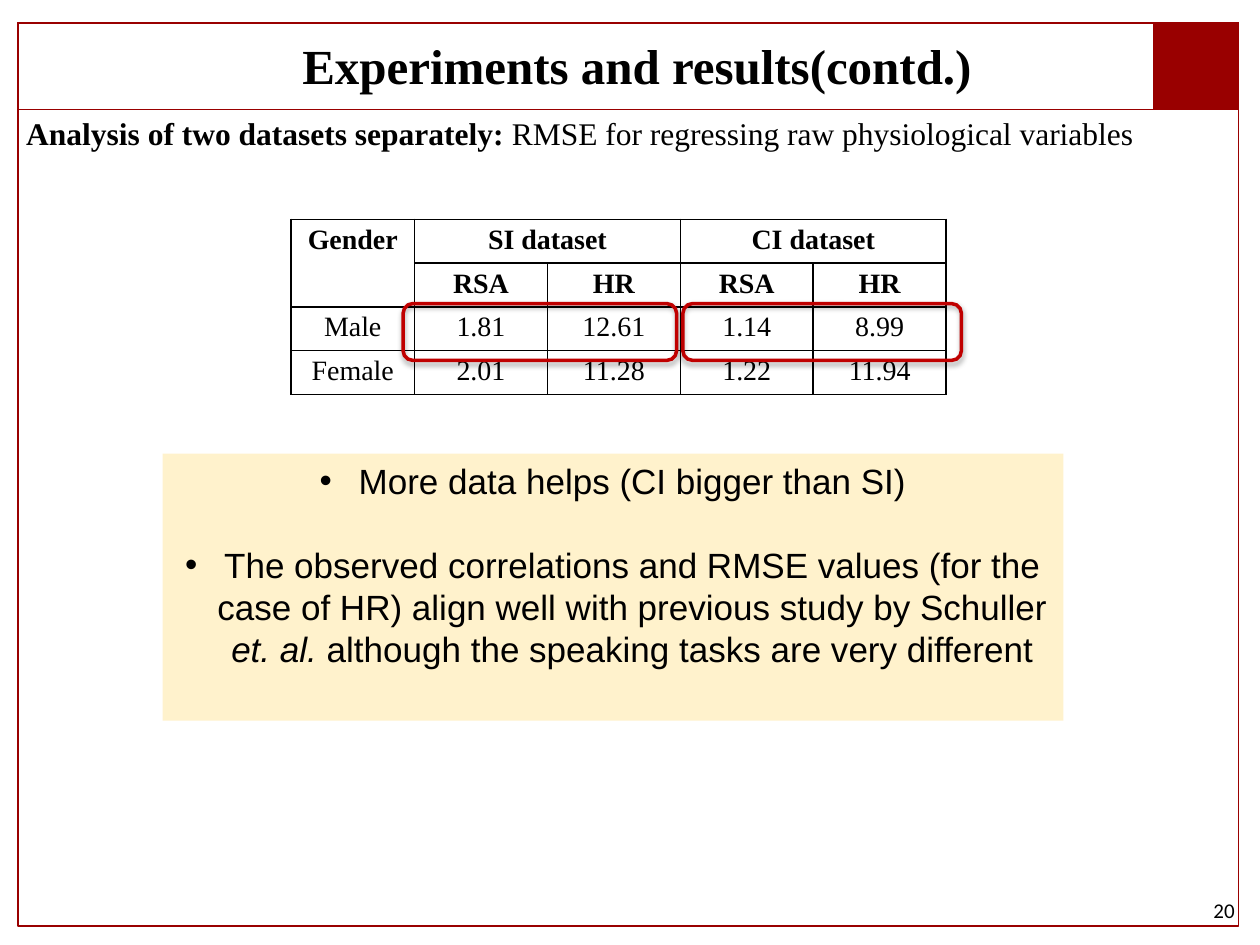
from lxml.etree import SubElement
from pptx import Presentation
from pptx.dml.color import RGBColor
from pptx.enum.shapes import MSO_SHAPE
from pptx.enum.text import MSO_ANCHOR, MSO_AUTO_SIZE, PP_ALIGN
from pptx.oxml.ns import qn
from pptx.util import Inches, Pt

COLORS = {"frame": "990000", "ink": "000000", "ring": "C00000", "panel": "FFF2CC"}
SERIF = "Times New Roman"
ROWS = [
    ["Gender", "SI dataset", "", "CI dataset", ""],
    ["", "RSA", "HR", "RSA", "HR"],
    ["Male", "1.81", "12.61", "1.14", "8.99"],
    ["Female", "2.01", "11.28", "1.22", "11.94"],
]
COLUMN_WIDTHS = [0.98] + [1.055] * 4
MERGES = [((0, 0), (1, 0)), ((0, 1), (0, 2)), ((0, 3), (0, 4))]
POINTS = [
    [("More data helps (CI bigger than SI)", False)],
    [
        ("The observed correlations and RMSE values (for the case of HR) "
         "align well with previous study by Schuller ", False),
        ("et. al.", True),
        (" although the speaking tasks are very different", False),
    ],
]


def color(name):
    """Return the named palette colour."""
    return RGBColor.from_string(COLORS[name])


def set_values(target, **values):
    """Set each given attribute on the target."""
    for name, value in values.items():
        setattr(target, name, value)


def place(shape, box):
    """Move a shape to a box given in inches."""
    edges = zip(("left", "top", "width", "height"), box)
    set_values(shape, **{name: Inches(value) for name, value in edges})


def add_span(para, text, size, face=SERIF, **values):
    """Append a formatted piece of text to a paragraph."""
    span = para.add_run()
    span.text = text
    set_values(span.font, size=Pt(size), name=face, **values)
    span.font.color.rgb = color("ink")


def set_frame(frame, inset, anchor=MSO_ANCHOR.TOP):
    """Give a text frame wrapping, equal insets and an anchor."""
    sides = ("left", "top", "right", "bottom")
    set_values(frame, word_wrap=True, auto_size=MSO_AUTO_SIZE.NONE, vertical_anchor=anchor,
               **{f"margin_{side}": Inches(inset) for side in sides})


def add_outline(page, box, kind, line, width, fill=None):
    """Draw an outlined shape, hollow unless a fill is named."""
    shape = page.shapes.add_shape(kind, *map(Inches, box))
    shape.shadow.inherit = False
    shape.line.color.rgb = color(line)
    shape.line.width = Pt(width)
    if fill:
        shape.fill.solid()
        shape.fill.fore_color.rgb = color(fill)
    else:
        shape.fill.background()
    return shape


def add_page_frame(page, box):
    """Draw the page border, title band and corner block."""
    left, top, width, height = box
    band, corner = 0.69, 0.67
    corner_box = (left + width - corner, top, corner, band)
    for part, fill in ((box, None), ((left, top, width, band), None), (corner_box, "frame")):
        add_outline(page, part, MSO_SHAPE.RECTANGLE, "frame", 1, fill)


def add_title(page, box):
    """Fill the title placeholder."""
    title = page.shapes.title
    place(title, box)
    frame = title.text_frame
    set_frame(frame, 0.05)
    frame.margin_top = Inches(0.1)
    para = frame.paragraphs[0]
    para.alignment = PP_ALIGN.CENTER
    add_span(para, "Experiments and results(contd.)", 28, bold=True)


def add_subheading(page, box):
    """Write the line that introduces the table."""
    frame = page.shapes.add_textbox(*map(Inches, box)).text_frame
    set_frame(frame, 0.05)
    frame.margin_left = Inches(0.1)
    para = frame.paragraphs[0]
    add_span(para, "Analysis of two datasets separately: ", 18, bold=True)
    add_span(para, "RMSE for regressing raw physiological variables", 18, bold=False)


def add_page_number(page, box):
    """Write the page number in the lower right corner."""
    frame = page.shapes.add_textbox(*map(Inches, box)).text_frame
    set_frame(frame, 0.05, MSO_ANCHOR.MIDDLE)
    para = frame.paragraphs[0]
    para.alignment = PP_ALIGN.RIGHT
    add_span(para, "20", 12, "Calibri")


def set_borders(cell):
    """Rule all four sides of a table cell."""
    properties = cell._tc.get_or_add_tcPr()
    for side in ("a:lnL", "a:lnR", "a:lnT", "a:lnB"):
        line = SubElement(properties, qn(side), w=str(Pt(1)))
        fill = SubElement(line, qn("a:solidFill"))
        SubElement(fill, qn("a:srgbClr"), val=COLORS["ink"])


def add_error_table(page, box):
    """Build the RMSE table by gender and dataset."""
    shape = page.shapes.add_table(len(ROWS), len(COLUMN_WIDTHS), *map(Inches, box))
    table = shape.table
    set_values(table, first_row=False, horz_banding=False)
    for column, width in zip(table.columns, COLUMN_WIDTHS):
        column.width = Inches(width)
    for start, end in MERGES:
        table.cell(*start).merge(table.cell(*end))
    for row, texts in enumerate(ROWS):
        for column, text in enumerate(texts):
            cell = table.cell(row, column)
            set_borders(cell)
            cell.fill.background()
            set_values(cell, margin_top=Inches(0.04), margin_bottom=Inches(0.04))
            if text:
                para = cell.text_frame.paragraphs[0]
                para.alignment = PP_ALIGN.CENTER
                add_span(para, text, 16, bold=row < 2)


def add_ring(page, box):
    """Ring a pair of table values with a softly shadowed outline."""
    ring = add_outline(page, box, MSO_SHAPE.ROUNDED_RECTANGLE, "ring", 2)
    effects = ring._element.spPr.find(qn("a:effectLst"))
    shadow = SubElement(effects, qn("a:outerShdw"), blurRad=str(Pt(3)), dist=str(Pt(1.8)),
                        dir="5400000", rotWithShape="0")
    tint = SubElement(shadow, qn("a:srgbClr"), val=COLORS["ink"])
    SubElement(tint, qn("a:alpha"), val="35000")


def add_findings(page, box):
    """Fill the body placeholder with the bulleted findings."""
    body = page.placeholders[1]
    place(body, box)
    body.fill.solid()
    body.fill.fore_color.rgb = color("panel")
    frame = body.text_frame
    set_frame(frame, 0.05)
    for index, spans in enumerate(POINTS):
        para = frame.add_paragraph() if index else frame.paragraphs[0]
        set_values(para, alignment=PP_ALIGN.CENTER, line_spacing=Pt(24),
                   space_before=Pt(24 if index else 0), space_after=Pt(0))
        properties = para._p.get_or_add_pPr()
        properties.set("marL", str(Inches(0.31)))
        properties.set("indent", str(Inches(-0.31)))
        SubElement(properties, qn("a:buFont"), typeface="Arial")
        SubElement(properties, qn("a:buChar"), char="•")
        for text, italic in spans:
            add_span(para, text, 20, "Arial", italic=italic)


def main():
    """Build and save the results page."""
    deck = Presentation()
    set_values(deck, slide_width=Inches(10), slide_height=Inches(7.5))
    page = deck.slides.add_slide(deck.slide_layouts[1])
    add_page_frame(page, (0.14, 0.18, 9.69, 7.17))
    add_title(page, (2.31, 0.18, 5.49, 0.69))
    add_page_number(page, (7.52, 7.02, 2.33, 0.4))
    add_error_table(page, (2.31, 1.74, 5.2, 1.39))
    add_subheading(page, (0.11, 0.86, 9.18, 0.4))
    for left, width in ((5.42, 2.21), (3.2, 2.17)):
        add_ring(page, (left, 2.41, width, 0.45))
    add_findings(page, (1.29, 3.6, 7.15, 2.12))
    deck.save("out.pptx")


if __name__ == "__main__":
    main()
